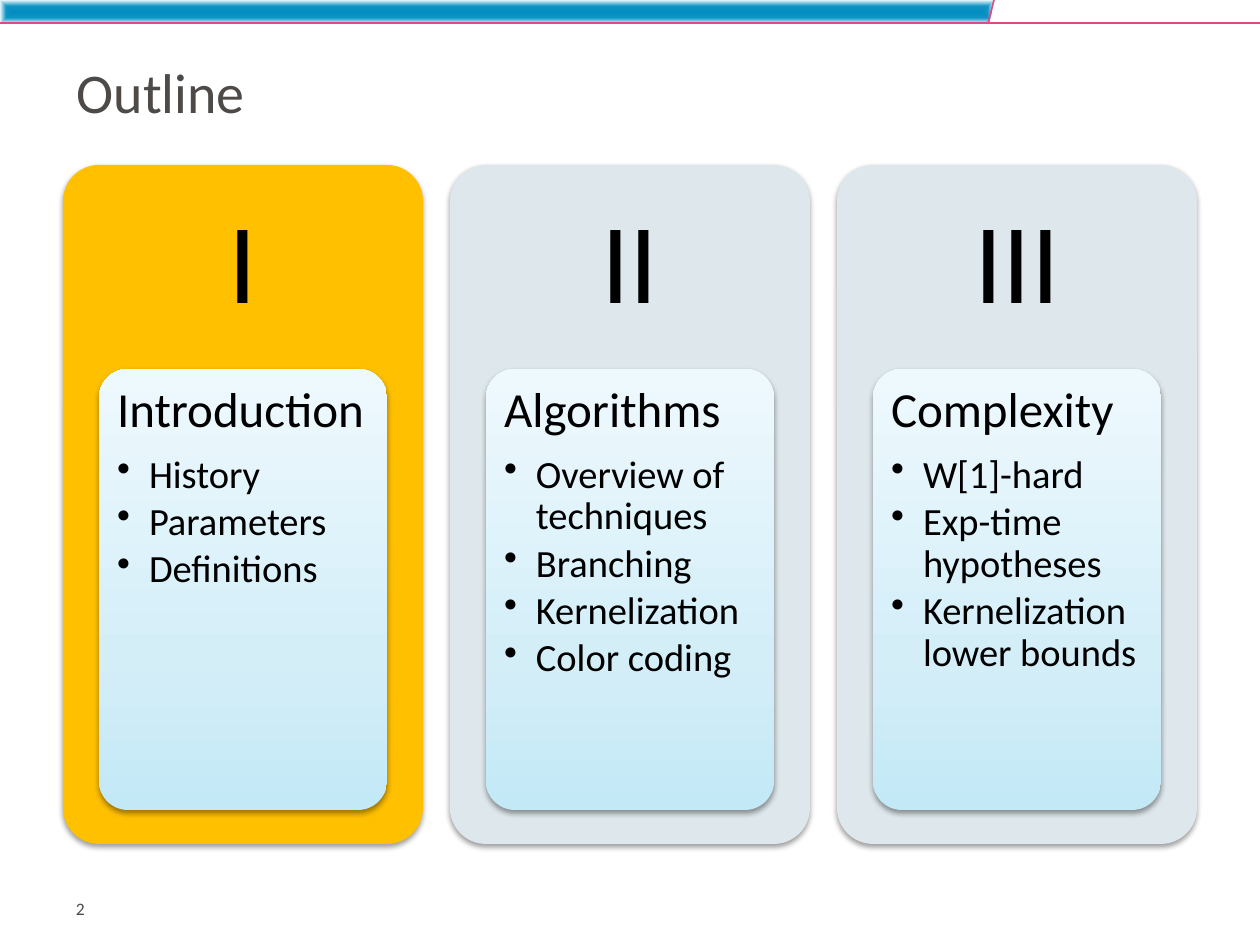
from dataclasses import dataclass

from lxml.etree import SubElement
from pptx import Presentation
from pptx.dml.color import RGBColor
from pptx.enum.shapes import MSO_CONNECTOR, MSO_SHAPE
from pptx.enum.text import MSO_ANCHOR, MSO_AUTO_SIZE, PP_ALIGN
from pptx.oxml import parse_xml
from pptx.oxml.ns import nsdecls, qn
from pptx.util import Emu, Pt

EMU_PER_PX = 914400 / 126


@dataclass(frozen=True)
class Theme:
    font: str = "Calibri"
    text: str = "000000"
    muted: str = "4E4A48"
    rule: str = "E2497F"
    active: str = "FFC000"
    inactive: str = "DEE7EB"
    band_stops: tuple = ((0, "038CC0"), (49, "0F94C4"), (100, "EEF9FD"))
    panel_stops: tuple = ((0, "C3E8F6"), (35, "D4EEF8"), (100, "EEF9FD"))
    title_size: int = 32
    numeral_size: int = 65
    heading_size: int = 28
    bullet_size: int = 22
    number_size: int = 10


@dataclass(frozen=True)
class Box:
    left: int
    top: int
    width: int
    height: int

    def emu(self) -> tuple:
        return tuple(px(n) for n in (self.left, self.top, self.width, self.height))


@dataclass(frozen=True)
class Part:
    numeral: str
    heading: str
    topics: tuple
    color: str


THEME = Theme()
PARTS = (
    Part("I", "Introduction", ("History", "Parameters", "Definitions"), THEME.active),
    Part("II", "Algorithms",
         ("Overview of techniques", "Branching", "Kernelization", "Color coding"),
         THEME.inactive),
    Part("III", "Complexity",
         ("W[1]-hard", "Exp-time hypotheses", "Kernelization lower bounds"),
         THEME.inactive),
)
CARD_LEFT, CARD_PITCH = 63, 387


def px(n: int) -> Emu:
    return Emu(round(n * EMU_PER_PX))


def rgb(color: str) -> RGBColor:
    return RGBColor.from_string(color)


def set_font(paragraph, size: int, color: str) -> None:
    font = paragraph.font
    font.name, font.size = THEME.font, Pt(size)
    font.color.rgb = rgb(color)


def set_gradient(shape, stops: tuple, direction: str) -> None:
    """Swap the solid fill for a gradient of several stops."""
    shape.fill.solid()
    stop_xml = "".join(
        f'<a:gs pos="{position * 1000}"><a:srgbClr val="{color}"/></a:gs>'
        for position, color in stops)
    gradient = parse_xml(
        f'<a:gradFill {nsdecls("a")} rotWithShape="1">'
        f"<a:gsLst>{stop_xml}</a:gsLst>{direction}</a:gradFill>")
    properties = shape._element.spPr
    properties.replace(properties.find(qn("a:solidFill")), gradient)


def add_shadow(shape) -> None:
    shape.shadow.inherit = False
    effects = shape._element.spPr.find(qn("a:effectLst"))
    shadow = SubElement(effects, qn("a:outerShdw"), blurRad=str(Pt(3.1)),
                        dist=str(Pt(1.6)), dir="5400000", rotWithShape="0")
    color = SubElement(shadow, qn("a:srgbClr"), val="000000")
    SubElement(color, qn("a:alpha"), val="38000")


def add_rounded(slide, box: Box):
    shape = slide.shapes.add_shape(MSO_SHAPE.ROUNDED_RECTANGLE, *box.emu())
    shape.adjustments[0] = 0.1
    shape.line.fill.background()
    add_shadow(shape)
    return shape


def add_text(slide, box: Box, insets: tuple, anchor=MSO_ANCHOR.TOP):
    """Add a wrapping text box; insets run left, top, right, bottom."""
    frame = slide.shapes.add_textbox(*box.emu()).text_frame
    frame.word_wrap = True
    frame.vertical_anchor = anchor
    (frame.margin_left, frame.margin_top,
     frame.margin_right, frame.margin_bottom) = map(px, insets)
    return frame


def write(paragraph, text: str, size: int, space_after: float) -> None:
    paragraph.text = text
    paragraph.line_spacing = 0.9
    paragraph.space_after = Pt(space_after)
    set_font(paragraph, size, THEME.text)


def add_bullet(frame, text: str) -> None:
    paragraph = frame.add_paragraph()
    write(paragraph, text, THEME.bullet_size, 3.3)
    paragraph.level = 1
    properties = paragraph._p.get_or_add_pPr()
    properties.set("marL", str(px(32)))
    properties.set("indent", str(-px(32)))
    SubElement(properties, qn("a:buChar"), char="•")


def add_rule(slide, start: tuple, end: tuple) -> None:
    line = slide.shapes.add_connector(
        MSO_CONNECTOR.STRAIGHT, *(px(n) for n in start + end))
    line.line.color.rgb = rgb(THEME.rule)
    line.line.width = Pt(1)
    SubElement(line._element.spPr, qn("a:effectLst"))


def add_header(slide) -> None:
    builder = slide.shapes.build_freeform(0, 0, scale=EMU_PER_PX)
    builder.add_line_segments(((994, 0), (989, 24), (0, 24)), close=True)
    band = builder.convert_to_shape()
    band.line.fill.background()
    band.shadow.inherit = False
    set_gradient(band, THEME.band_stops,
                 '<a:path path="shape"><a:fillToRect l="50000" t="50000" '
                 'r="50000" b="50000"/></a:path>')
    add_rule(slide, (994, 0), (988, 24))
    add_rule(slide, (1260, 23), (0, 23))


def add_title(slide, text: str) -> None:
    title = slide.shapes.title
    title.left, title.top, title.width, title.height = Box(64, 48, 1134, 87).emu()
    frame = title.text_frame
    frame.auto_size = MSO_AUTO_SIZE.NONE
    frame.vertical_anchor = MSO_ANCHOR.MIDDLE
    paragraph = frame.paragraphs[0]
    paragraph.text = text
    paragraph.alignment = PP_ALIGN.LEFT
    set_font(paragraph, THEME.title_size, THEME.muted)


def add_card(slide, left: int, part: Part) -> None:
    # Outer card with its numeral
    card = add_rounded(slide, Box(left, 165, 360, 679))
    card.fill.solid()
    card.fill.fore_color.rgb = rgb(part.color)
    frame = add_text(slide, Box(left, 165, 360, 204), (34,) * 4, MSO_ANCHOR.MIDDLE)
    numeral = frame.paragraphs[0]
    write(numeral, part.numeral, THEME.numeral_size, 0)
    numeral.alignment = PP_ALIGN.CENTER

    # Inner panel with heading and topics
    panel = add_rounded(slide, Box(left + 36, 369, 288, 441))
    set_gradient(panel, THEME.panel_stops, '<a:lin ang="16200000" scaled="0"/>')
    frame = add_text(slide, Box(left + 44, 377, 271, 425), (10, 8, 10, 8))
    write(frame.paragraphs[0], part.heading, THEME.heading_size, 9.8)
    for topic in part.topics:
        add_bullet(frame, topic)


def add_slide_number(slide, number: str) -> None:
    frame = add_text(slide, Box(63, 898, 270, 38), (13, 0, 13, 6))
    paragraph = frame.paragraphs[0]
    paragraph.text = number
    set_font(paragraph, THEME.number_size, THEME.muted)


def main() -> None:
    presentation = Presentation()
    presentation.slide_width, presentation.slide_height = px(1260), px(945)
    slide = presentation.slides.add_slide(presentation.slide_layouts[5])
    add_header(slide)
    add_title(slide, "Outline")
    for index, part in enumerate(PARTS):
        add_card(slide, CARD_LEFT + index * CARD_PITCH, part)
    add_slide_number(slide, "2")
    presentation.save("out.pptx")


if __name__ == "__main__":
    main()
